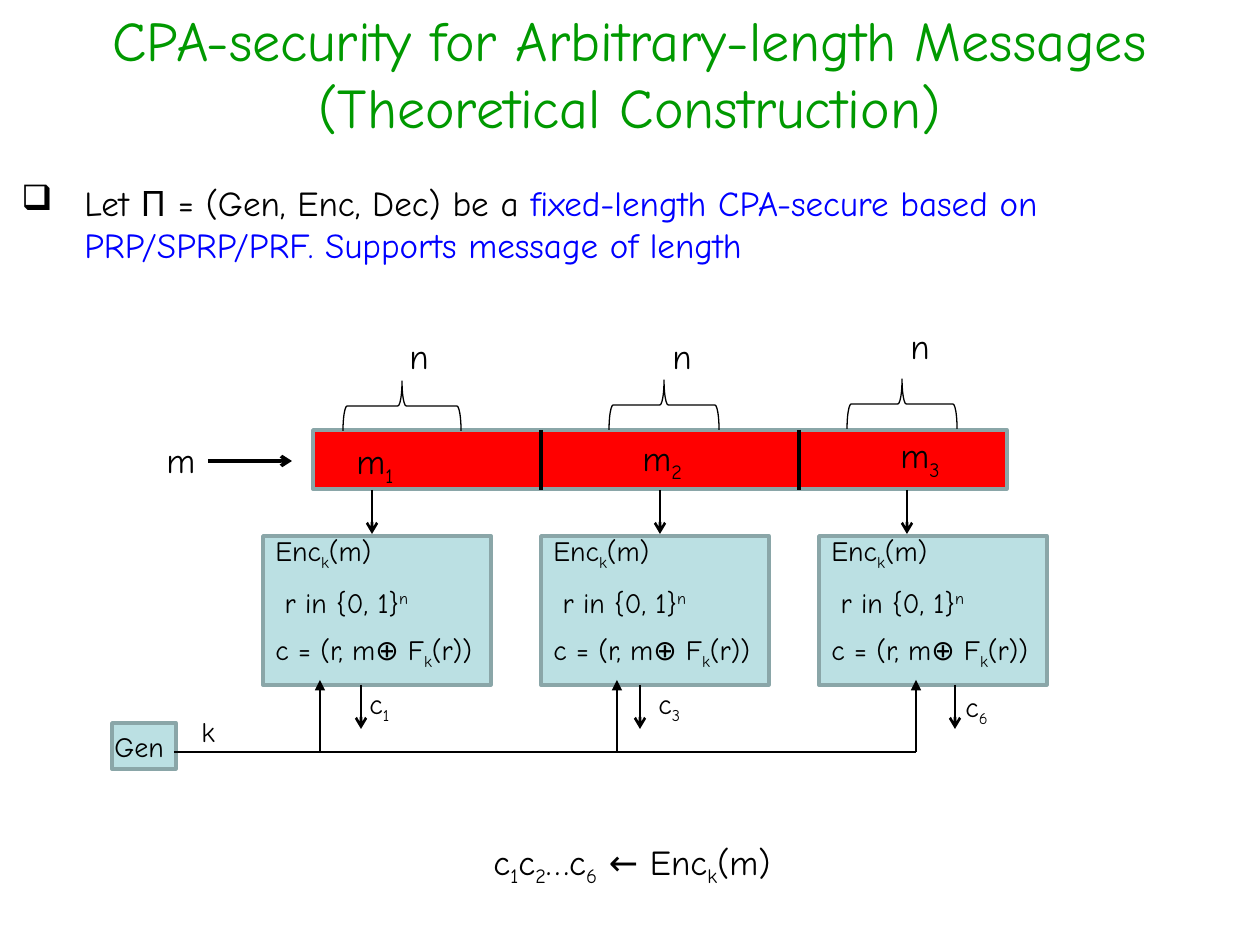
from lxml import etree
from pptx import Presentation
from pptx.dml.color import RGBColor
from pptx.enum.shapes import MSO_CONNECTOR, MSO_SHAPE
from pptx.enum.text import PP_ALIGN
from pptx.oxml.ns import qn
from pptx.util import Pt

PX = 914400 / 126
BLACK = RGBColor(0, 0, 0)
GREEN = RGBColor(0, 0x99, 0)
BLUE = RGBColor(0, 0, 0xFF)
RED = RGBColor(0xFF, 0, 0)
TEAL = RGBColor(0xBB, 0xE0, 0xE3)
EDGE = RGBColor(0x8A, 0xA6, 0xA8)
RECT, BRACE = MSO_SHAPE.RECTANGLE, MSO_SHAPE.LEFT_BRACE
LINE = MSO_CONNECTOR.STRAIGHT
CENTER = PP_ALIGN.CENTER

deck = Presentation()
deck.slide_width, deck.slide_height = round(1260 * PX), round(945 * PX)
slide = deck.slides.add_slide(deck.slide_layouts[6])
shapes = slide.shapes


def text(box, lines, size=20, color=BLACK, hang=0):
    """Add a text box; _x is a subscript and ^x a superscript."""
    frame = shapes.add_textbox(*[round(v * PX) for v in box]).text_frame
    frame.word_wrap = True
    for row, line in enumerate(lines):
        para = frame.add_paragraph() if row else frame.paragraphs[0]
        para.font.name, para.font.size = "Comic Neue", Pt(size)
        para.font.color.rgb = color
        if row:
            para.space_before = Pt(size / 2)
        if hang:
            props = para._p.get_or_add_pPr()
            props.set("marL", str(round(hang * PX)))
            props.set("indent", str(round(-hang * PX)))
        first, *rest = line.replace("^", "_^").split("_")
        para.add_run().text = first
        for part in rest:
            base = "30000" if part[0] == "^" else "-25000"
            part = part.lstrip("^")
            small = para.add_run()
            small.text = part[0]
            small._r.get_or_add_rPr().set("baseline", base)
            if part[1:]:
                para.add_run().text = part[1:]
    return frame.paragraphs[0]


def line(x1, y1, x2, y2, width=1.5, end=None, kind="arrow"):
    """Draw a line; end is headEnd (start) or tailEnd (finish)."""
    rule = shapes.add_connector(LINE, *[round(v * PX) for v in (x1, y1, x2, y2)])
    rule.line.color.rgb, rule.line.width = BLACK, Pt(width)
    if end:
        tip = etree.SubElement(rule.line._get_or_add_ln(), qn("a:" + end))
        tip.set("type", kind)
    etree.SubElement(rule._element.spPr, qn("a:effectLst"))


# Title
title = text((-5, -1, 1270, 118),
             ["CPA-security for Arbitrary-length Messages (Theoretical Construction)"],
             32, GREEN)
title.alignment = CENTER

# Bullet
intro = text((9, 175, 1251, 97), ["Let Π = (Gen, Enc, Dec) be a "], hang=63)
etree.SubElement(intro._p.pPr, qn("a:buChar")).set("char", "❑")
intro._p.pPr.insert(0, intro._p.pPr.find(qn("a:buChar")))
claim = intro.add_run()
claim.text = "fixed-length CPA-secure based on PRP/SPRP/PRF. Supports message of length"
claim.font.color.rgb = BLUE

# Filled boxes: message, Gen, three Enc blocks
blocks = [(263 + 278 * i, 536, 228, 149) for i in range(3)]
fills = [((313, 430, 694, 59), RED), ((112, 723, 64, 46), TEAL)]
for box, fill in fills + [(block, TEAL) for block in blocks]:
    rect = shapes.add_shape(RECT, *[round(v * PX) for v in box])
    rect.shadow.inherit = False
    rect.fill.solid()
    rect.fill.fore_color.rgb = fill
    rect.line.color.rgb, rect.line.width = EDGE, Pt(2)

# Message parts and their input arrows
for x in (541, 799):
    line(x, 430, x, 490, 2)
text((154, 432, 74, 55), ["m"])
line(208, 461, 292, 461, 2, "tailEnd")
for name, x, y in (("m_1", 344, 433), ("m_2", 630, 430), ("m_3", 888, 427)):
    text((x, y, 74, 55), [name])
for x in (372, 660, 907):
    line(x, 490, x, 534, end="tailEnd")

# Braces, turned to point up at n
for x, y, span, nx, ny in ((402, 406, 118, 397, 328),
                           (664, 405, 110, 660, 328),
                           (902, 404, 110, 898, 318)):
    frame = (x - 25, y - span / 2, 50, span)
    brace = shapes.add_shape(BRACE, *[round(v * PX) for v in frame])
    brace.rotation = 90
    brace.shadow.inherit = False
    brace.fill.background()
    brace.line.color.rgb, brace.line.width = BLACK, Pt(0.75)
    text((nx, ny, 74, 55), ["n"])

# Enc steps
for x, y, w, h in blocks:
    text((x, y - 9, 258, h),
         ["Enc_k(m)", " r in {0, 1}^n", "c = (r, m⊕ F_k(r))"], 16, hang=63)

# Key line from Gen
text((102, 723, 90, 46), ["Gen"], 16)
text((189, 708, 53, 46), ["k"], 16)
line(174, 752, 916, 752)
for x in (320, 617, 916):
    line(x, 680, x, 752, end="headEnd", kind="triangle")

# Block outputs
for name, x, tx, ty in (("c_1", 361, 357, 680), ("c_3", 640, 646, 680),
                        ("c_6", 955, 953, 683)):
    line(x, 685, x, 729, end="tailEnd")
    text((tx, ty, 53, 46), [name], 16)

# Result
text((481, 834, 367, 55), ["c_1c_2…c_6 ← Enc_k(m)"])

deck.save("out.pptx")
